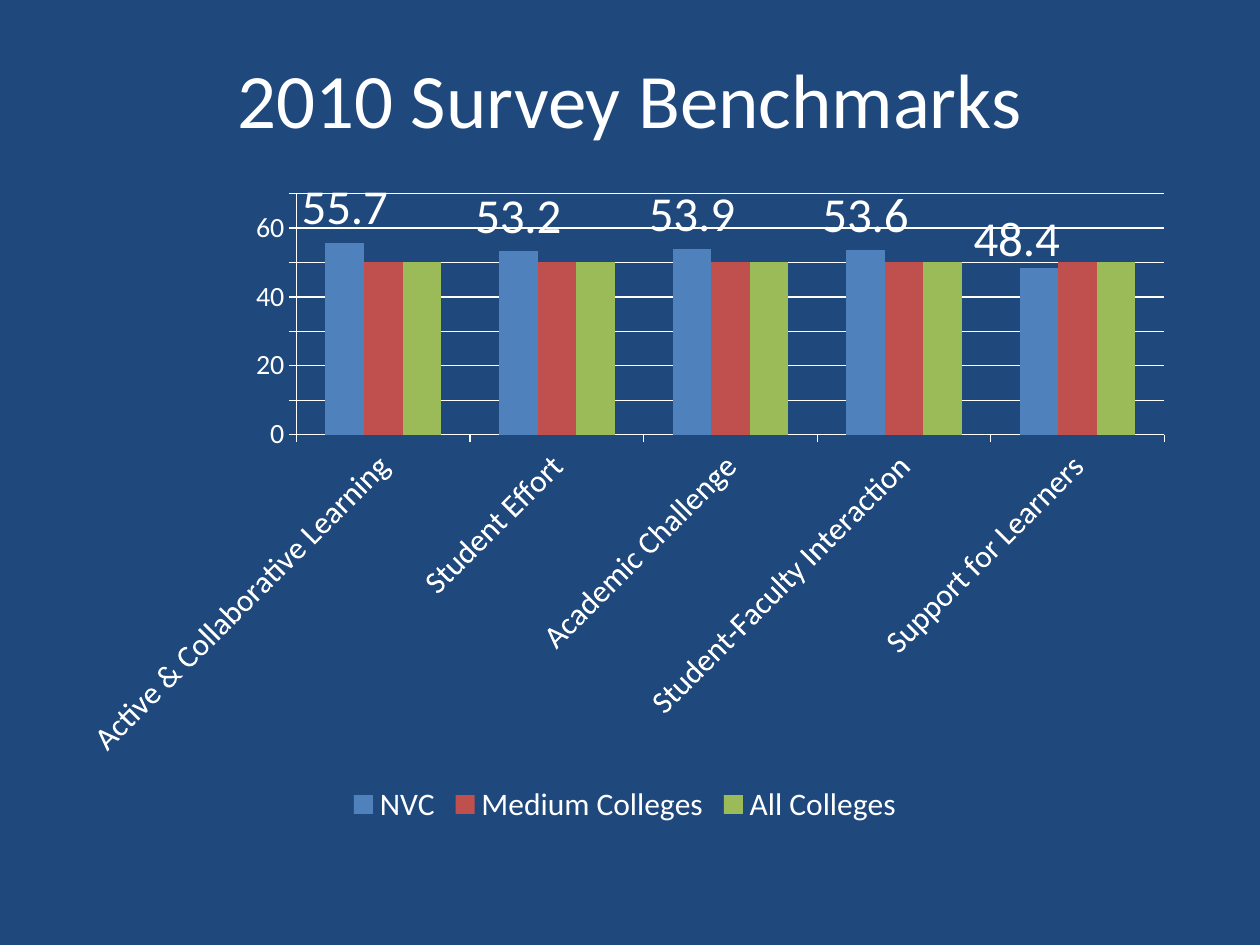
from pptx import Presentation
from pptx.chart.data import CategoryChartData
from pptx.dml.color import RGBColor
from pptx.enum.chart import XL_CHART_TYPE, XL_LABEL_POSITION, XL_LEGEND_POSITION, XL_TICK_MARK
from pptx.enum.text import MSO_ANCHOR, PP_ALIGN
from pptx.oxml import parse_xml
from pptx.oxml.ns import nsdecls, qn
from pptx.util import Pt

PX = 914400 // 126
NAVY = RGBColor(0x1F, 0x49, 0x7D)
WHITE = RGBColor(0xFF, 0xFF, 0xFF)
BLUE = RGBColor(0x4F, 0x81, 0xBD)
RED = RGBColor(0xC0, 0x50, 0x4D)
GREEN = RGBColor(0x9B, 0xBB, 0x59)

GROUPS = ["Active & Collaborative Learning", "Student Effort", "Academic Challenge",
          "Student-Faculty Interaction", "Support for Learners"]
SERIES = [("NVC", [55.7, 53.2, 53.9, 53.6, 48.4], BLUE),
          ("Medium Colleges", [50] * 5, RED),
          ("All Colleges", [50] * 5, GREEN)]


def px(*vals):
    return [val * PX for val in vals]


def apply(item, **vals):
    for name, val in vals.items():
        setattr(item, name, val)


def style(font, size):
    apply(font, size=Pt(size), name="Calibri", bold=False)
    font.color.rgb = WHITE


def add_title(slide):
    title = slide.shapes.title
    left, top, width, height = px(63, 38, 1134, 120)
    apply(title, left=left, top=top, width=width, height=height)
    frame = title.text_frame
    frame.text = "2010 Survey Benchmarks"
    frame.vertical_anchor = MSO_ANCHOR.MIDDLE
    para = frame.paragraphs[0]
    para.alignment = PP_ALIGN.CENTER
    style(para.runs[0].font, 44)


def style_axis(axis, size):
    axis.major_tick_mark = XL_TICK_MARK.OUTSIDE
    style(axis.tick_labels.font, size)
    axis.format.line.color.rgb = WHITE


def add_labels(bars):
    """Label each bar and nudge the last label left and down."""
    labels = bars.data_labels
    apply(labels, show_value=True, position=XL_LABEL_POSITION.OUTSIDE_END)
    style(labels.font, 28)
    last = bars.points[4].data_label
    style(last.font, 28)
    last.position = XL_LABEL_POSITION.OUTSIDE_END
    nudge = parse_xml(f'<c:layout {nsdecls("c")}><c:manualLayout>'
                      '<c:x val="-0.02"/><c:y val="0.01"/></c:manualLayout></c:layout>')
    labels._element.find(qn("c:dLbl")).insert(1, nudge)


def add_chart(slide):
    data = CategoryChartData()
    data.categories = GROUPS
    for name, vals, _ in SERIES:
        data.add_series(name, vals)
    chart = slide.shapes.add_chart(
        XL_CHART_TYPE.COLUMN_CLUSTERED, *px(63, 179, 1124, 651), data).chart
    apply(chart, has_title=False, has_legend=True)
    style(chart.font, 12)
    apply(chart.legend, position=XL_LEGEND_POSITION.BOTTOM, include_in_layout=False)
    style(chart.legend.font, 18)

    plot = chart.plots[0]
    apply(plot, gap_width=150, overlap=0, vary_by_categories=False)
    for bars, (_, _, color) in zip(plot.series, SERIES):
        bars.format.fill.solid()
        bars.format.fill.fore_color.rgb = color
    add_labels(plot.series[0])

    style_axis(chart.category_axis, 18)
    turn = chart.category_axis._element.find(f"{qn('c:txPr')}/{qn('a:bodyPr')}")
    turn.set("rot", "-2700000")
    axis = chart.value_axis
    style_axis(axis, 16)
    apply(axis, minimum_scale=0, maximum_scale=70, major_unit=10, has_major_gridlines=True)
    axis.major_gridlines.format.line.color.rgb = WHITE


def main():
    deck = Presentation()
    deck.slide_width, deck.slide_height = px(1260, 945)
    slide = deck.slides.add_slide(deck.slide_layouts[5])
    slide.background.fill.solid()
    slide.background.fill.fore_color.rgb = NAVY
    add_title(slide)
    add_chart(slide)
    deck.save("out.pptx")


if __name__ == "__main__":
    main()
